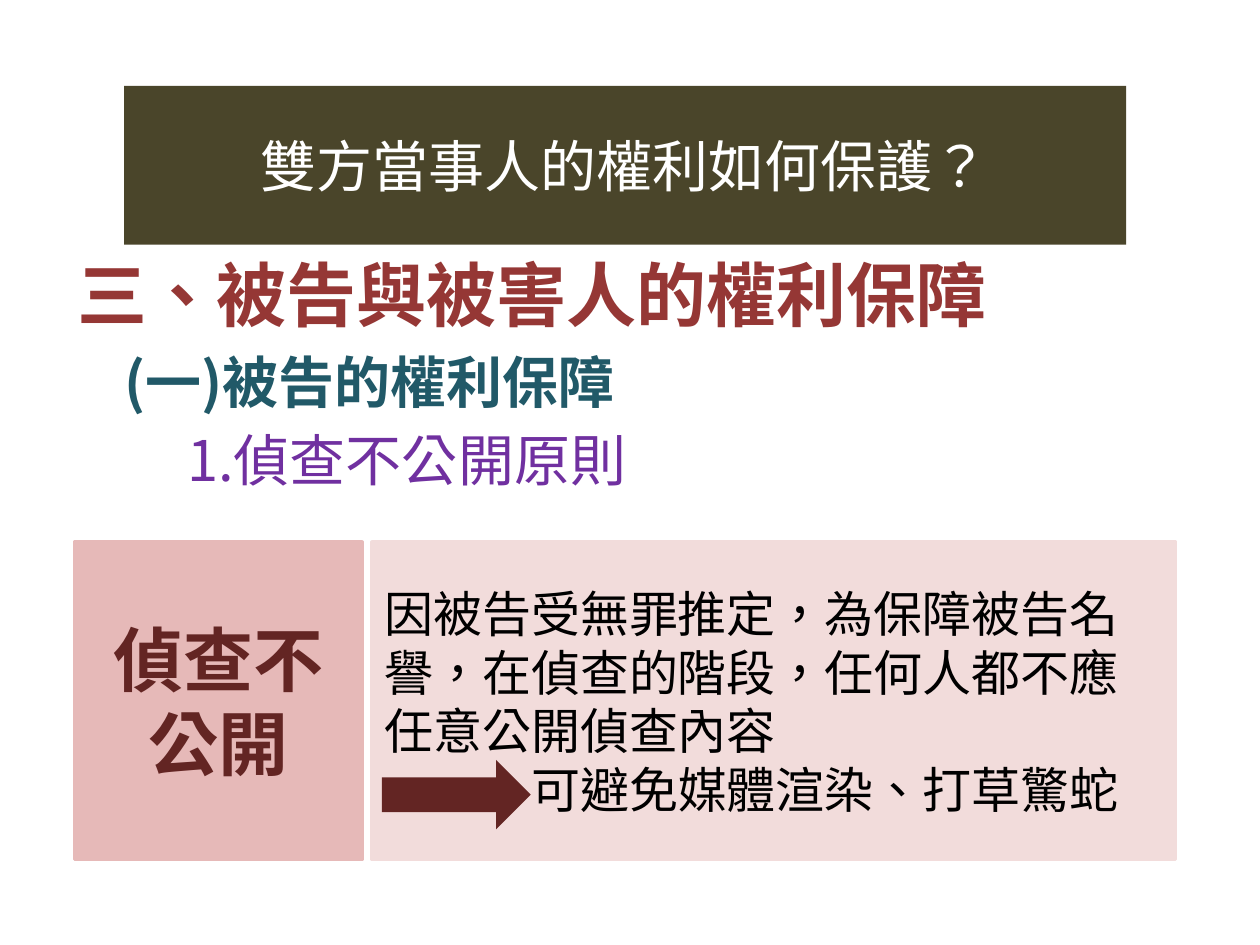
from lxml import etree
from pptx import Presentation
from pptx import util as u
from pptx.dml.color import RGBColor
from pptx.enum import shapes, text
from pptx.oxml.ns import qn

CJK = "Noto Sans CJK SC"


def color(hue):
    return RGBColor.from_string(hue)


def write(para, words, size, hue, bold=False, face=CJK):
    run = para.add_run()
    run.text = words
    font = run.font
    font.size, font.bold, font.name = u.Pt(size), bold, face
    font.color.rgb = color(hue)
    props = run._r.get_or_add_rPr()
    props.set("lang", "zh-TW")
    etree.SubElement(props, qn("a:ea")).set("typeface", CJK)


deck = Presentation()
deck.slide_width, deck.slide_height = u.Cm(25.4), u.Cm(19.05)
slide = deck.slides.add_slide(deck.slide_layouts[1])

title = slide.shapes.title
title.left, title.top = u.Cm(2.5), u.Cm(1.73)
title.width, title.height = u.Cm(20.2), u.Cm(3.2)
title.fill.solid()
title.fill.fore_color.rgb = color("4A452A")
frame = title.text_frame
frame.auto_size = text.MSO_AUTO_SIZE.NONE
frame.vertical_anchor = text.MSO_ANCHOR.MIDDLE
write(frame.paragraphs[0], "雙方當事人的權利如何保護？", 32, "FFFFFF")

body = slide.placeholders[1]
body.left, body.top = u.Cm(1.3), u.Cm(4.95)
body.width, body.height = u.Cm(22.86), u.Cm(12.57)
frame = body.text_frame
frame.auto_size = text.MSO_AUTO_SIZE.NONE
heads = [
    ("三、被告與被害人的權利保障", 40, "953735", True),
    ("\t(一)被告的權利保障", 32, "215968", True),
    ("\t\t1.偵查不公開原則", 32, "7030A0", False),
]
for i, (words, size, hue, bold) in enumerate(heads):
    para = frame.add_paragraph() if i else frame.paragraphs[0]
    props = para._p.get_or_add_pPr()
    props.set("marL", str(u.Cm(0.95)))
    props.set("indent", str(-u.Cm(0.95)))
    etree.SubElement(props, qn("a:buNone"))
    if not i:
        para.space_before = u.Pt(0)
    write(para, words, size, hue, bold)

cards = []
for left, width, hue in [(1.5, 5.8, "E6B9B8"), (7.5, 16.2, "F2DCDB")]:
    card = slide.shapes.add_shape(
        shapes.MSO_SHAPE.RECTANGLE, u.Cm(left), u.Cm(10.93), u.Cm(width), u.Cm(6.4))
    card.shadow.inherit = False
    card.fill.solid()
    card.fill.fore_color.rgb = color(hue)
    card.line.color.rgb = color(hue)
    card.line.width = u.Pt(2)
    card.text_frame.word_wrap = True
    card.text_frame.vertical_anchor = text.MSO_ANCHOR.MIDDLE
    cards.append(card.text_frame)

term, note = cards
para = term.paragraphs[0]
para.alignment = text.PP_ALIGN.CENTER
write(para, "偵查不公開", 40, "632523", True, "Calibri")

lines = [
    ("因被告受無罪推定，為保障被告名譽，在偵查的階段，任何人都不應任意公開偵查內容", 0),
    ("可避免媒體渲染、打草驚蛇", 2.96),
]
for i, (words, inset) in enumerate(lines):
    para = note.add_paragraph() if i else note.paragraphs[0]
    para.alignment = text.PP_ALIGN.LEFT
    para._p.get_or_add_pPr().set("indent", str(u.Cm(inset)))
    write(para, words, 28, "000000", face="Calibri")

arrow = slide.shapes.add_shape(
    shapes.MSO_SHAPE.RIGHT_ARROW, u.Cm(7.7), u.Cm(15.32), u.Cm(3), u.Cm(1.4))
arrow.shadow.inherit = False
arrow.fill.solid()
arrow.fill.fore_color.rgb = color("632523")
arrow.line.fill.background()

deck.save("out.pptx")
